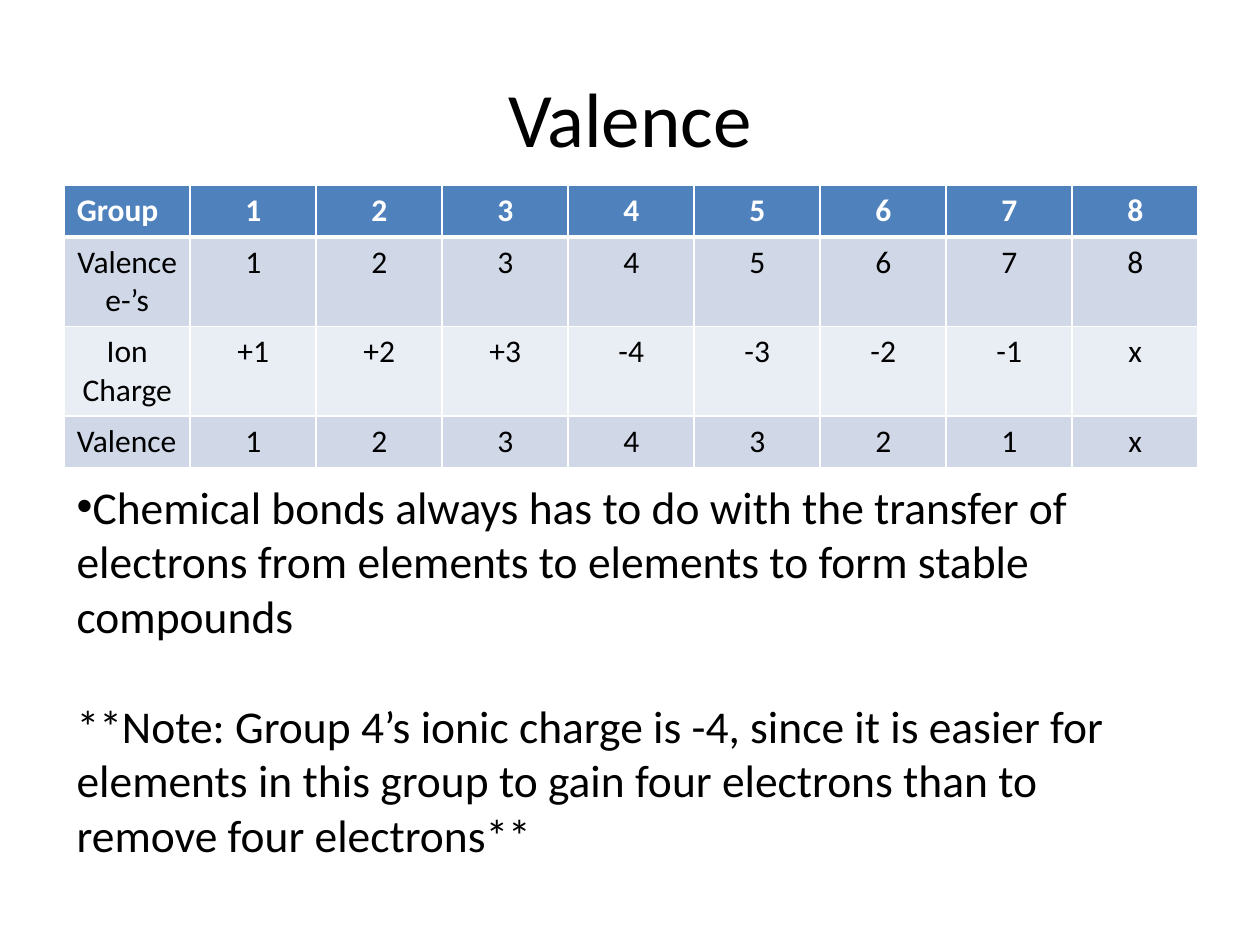
from dataclasses import dataclass

from lxml import etree
from pptx import Presentation
from pptx.dml.color import RGBColor
from pptx.enum.text import MSO_ANCHOR, MSO_AUTO_SIZE, PP_ALIGN
from pptx.oxml.ns import qn
from pptx.util import Inches, Pt

LEFT, CENTER = PP_ALIGN.LEFT, PP_ALIGN.CENTER
MIDDLE = MSO_ANCHOR.MIDDLE
GROW = MSO_AUTO_SIZE.SHAPE_TO_FIT_TEXT
TITLE_ONLY = 5


@dataclass(frozen=True)
class Theme:
    font: str = "Calibri"
    title_size: int = 44
    table_size: int = 18
    body_size: int = 26
    black: str = "000000"
    white: str = "FFFFFF"
    header: str = "4F81BD"
    bands: tuple = ("D0D8E8", "E9EDF4")
    line_width: int = 1
    header_line_width: int = 3
    line_spacing: float = 1.22


THEME = Theme()

# Table grid, in inches
TABLE_LEFT, TABLE_TOP = 0.51, 1.47
COLUMN_WIDTH, ROW_HEIGHT = 1, 0.41

TABLE_ROWS = [
    ["Group", "1", "2", "3", "4", "5", "6", "7", "8"],
    ["Valence e-’s", "1", "2", "3", "4", "5", "6", "7", "8"],
    ["Ion Charge", "+1", "+2", "+3", "-4", "-3", "-2", "-1", "x"],
    ["Valence", "1", "2", "3", "4", "3", "2", "1", "x"],
]
LEFT_ALIGNED_LABELS = ("Group", "Valence")

BOND_TEXT = ("Chemical bonds always has to do with the transfer of electrons "
             "from elements to elements to form stable compounds")
NOTE_TEXT = ("**Note: Group 4’s ionic charge is -4, since it is easier for "
             "elements in this group to gain four electrons than to remove "
             "four electrons**")


def add_run(paragraph, text, size, color=THEME.black, bold=False):
    run = paragraph.add_run()
    run.text = text
    run.font.name = THEME.font
    run.font.size = Pt(size)
    run.font.bold = bold
    run.font.color.rgb = RGBColor.from_string(color)


def add_title(slide, text):
    title = slide.shapes.title
    title.left, title.top = Inches(0.5), Inches(0.3)
    title.width, title.height = Inches(9), Inches(1.25)
    title.text_frame.vertical_anchor = MIDDLE
    paragraph = title.text_frame.paragraphs[0]
    paragraph.alignment = CENTER
    add_run(paragraph, text, THEME.title_size)


def set_cell_borders(cell, bottom_width):
    properties = cell._tc.get_or_add_tcPr()
    widths = {"a:lnL": THEME.line_width, "a:lnR": THEME.line_width,
              "a:lnT": THEME.line_width, "a:lnB": bottom_width}
    for tag, width in widths.items():
        line = etree.SubElement(properties, qn(tag), w=str(Pt(width)))
        fill = etree.SubElement(line, qn("a:solidFill"))
        etree.SubElement(fill, qn("a:srgbClr"), val=THEME.white)


def format_cell(cell, text, row):
    is_header = row == 0
    # Borders come before the fill in the cell properties
    set_cell_borders(cell, THEME.header_line_width if is_header else THEME.line_width)
    color = THEME.header if is_header else THEME.bands[(row - 1) % 2]
    cell.fill.solid()
    cell.fill.fore_color.rgb = RGBColor.from_string(color)
    paragraph = cell.text_frame.paragraphs[0]
    paragraph.alignment = LEFT if text in LEFT_ALIGNED_LABELS else CENTER
    add_run(paragraph, text, THEME.table_size,
            THEME.white if is_header else THEME.black, is_header)


def add_valence_table(slide, rows):
    row_count, column_count = len(rows), len(rows[0])
    table = slide.shapes.add_table(
        row_count, column_count, Inches(TABLE_LEFT), Inches(TABLE_TOP),
        Inches(COLUMN_WIDTH * column_count), Inches(ROW_HEIGHT * row_count)).table
    for row, texts in enumerate(rows):
        for column, text in enumerate(texts):
            format_cell(table.cell(row, column), text, row)


def add_bullet(paragraph):
    properties = paragraph._p.get_or_add_pPr()
    etree.SubElement(properties, qn("a:buFont"), typeface="Arial")
    etree.SubElement(properties, qn("a:buChar"), char="•")


def add_explanation(slide):
    box = slide.shapes.add_textbox(
        Inches(TABLE_LEFT), Inches(3.75), Inches(8.98), Inches(3.16))
    frame = box.text_frame
    frame.word_wrap = True
    frame.auto_size = GROW
    bond = frame.paragraphs[0]
    add_bullet(bond)
    add_run(bond, BOND_TEXT, THEME.body_size)
    # One line of space separates the note from the bullet
    note = frame.add_paragraph()
    note.space_before = Pt(round(THEME.body_size * THEME.line_spacing, 1))
    add_run(note, NOTE_TEXT, THEME.body_size)


def main():
    presentation = Presentation()
    presentation.slide_width, presentation.slide_height = Inches(10), Inches(7.5)
    slide = presentation.slides.add_slide(presentation.slide_layouts[TITLE_ONLY])
    add_title(slide, "Valence")
    add_valence_table(slide, TABLE_ROWS)
    add_explanation(slide)
    presentation.save("out.pptx")


if __name__ == "__main__":
    main()
